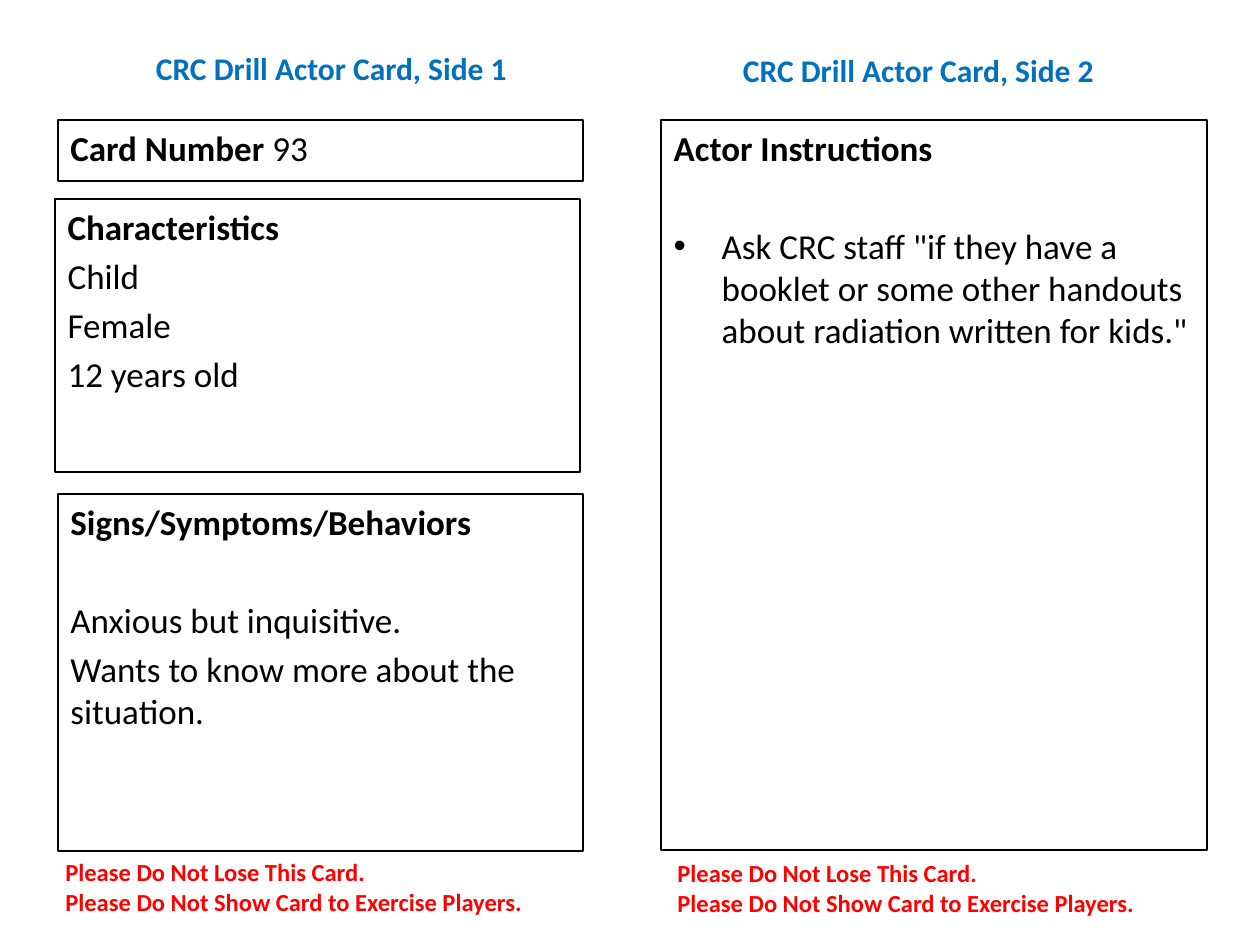
from lxml.etree import SubElement
from pptx import Presentation
from pptx.dml.color import RGBColor
from pptx.enum.text import MSO_ANCHOR as Anchor, MSO_AUTO_SIZE as AutoSize, PP_ALIGN as Align
from pptx.oxml.ns import qn
from pptx.util import Pt

PX = 914400 / 126
NORMAL_GAP, SECTION_GAP = 4, 32
BULLET_INDENT = 48


def color(hex_value):
    return RGBColor.from_string(hex_value)


def fill_box(shape, box, paragraphs, size, ink, align=Align.LEFT):
    """Place a shape and write (runs, space before, bulleted) paragraphs; a run is (text, bold)."""
    places = zip(("left", "top", "width", "height"), box)
    for side, length in places:
        setattr(shape, side, round(length * PX))
    frame = shape.text_frame
    frame.word_wrap = True
    frame.auto_size = AutoSize.NONE
    for number, (runs, gap, bulleted) in enumerate(paragraphs):
        paragraph = frame.add_paragraph() if number else frame.paragraphs[0]
        paragraph.alignment = align
        paragraph.space_before = Pt(gap)
        properties = paragraph._p.get_or_add_pPr()
        indent = round(BULLET_INDENT * PX) if bulleted else 0
        properties.set("marL", str(indent))
        properties.set("indent", str(-indent))
        if bulleted:
            SubElement(properties, qn("a:buFont"), typeface="Arial")
            SubElement(properties, qn("a:buChar"), char="•")
        else:
            SubElement(properties, qn("a:buNone"))
        for text, bold in runs:
            run = paragraph.add_run()
            run.text = text
            font_format = {"name": "Calibri", "size": Pt(size), "bold": bold}
            for key, value in font_format.items():
                setattr(run.font, key, value)
            run.font.color.rgb = color(ink)


prs = Presentation()
prs.slide_width, prs.slide_height = round(1260 * PX), round(945 * PX)
slide = prs.slides.add_slide(prs.slide_layouts[3])
title, characteristics, instructions = slide.placeholders


def new_textbox():
    return slide.shapes.add_textbox(0, 0, 0, 0)


# Side headings
for heading, side, left, top in ((title, 1, 53, 19), (new_textbox(), 2, 640, 21)):
    text = f"CRC Drill Actor Card, Side {side}"
    fill_box(heading, (left, top, 557, 98), [([(text, True)], 0, False)], 18, "0070C0", Align.CENTER)
    heading.text_frame.vertical_anchor = Anchor.MIDDLE

# Outlined card sections
sections = (
    (new_textbox(), (58, 120, 525, 61),
     [([("Card Number ", True), ("93", False)], 0, False)]),
    (characteristics, (55, 199, 525, 273),
     [([("Characteristics", True)], 0, False),
      ([("Child", False)], NORMAL_GAP, False),
      ([("Female", False)], NORMAL_GAP, False),
      ([("12 years old", False)], NORMAL_GAP, False)]),
    (new_textbox(), (58, 494, 525, 357),
     [([("Signs/Symptoms/Behaviors", True)], 0, False),
      ([("Anxious but inquisitive.", False)], SECTION_GAP, False),
      ([("Wants to know more about the situation.", False)], NORMAL_GAP, False)]),
    (instructions, (661, 120, 546, 730),
     [([("Actor Instructions", True)], 0, False),
      ([('Ask CRC staff "if they have a booklet or some other handouts '
         'about radiation written for kids."', False)], SECTION_GAP, True)]),
)
for section, box, paragraphs in sections:
    fill_box(section, box, paragraphs, 20, "000000")
    section.line.color.rgb = color("000000")
    section.line.width = Pt(0.75)

# Reminders under each side
reminder = [([(text, True)], 0, False) for text in
            ("Please Do Not Lose This Card.", "Please Do Not Show Card to Exercise Players.")]
for left, top in ((53, 851), (665, 852)):
    fill_box(new_textbox(), (left, top, 530, 72), reminder, 14, "FF0000")

prs.save("out.pptx")
